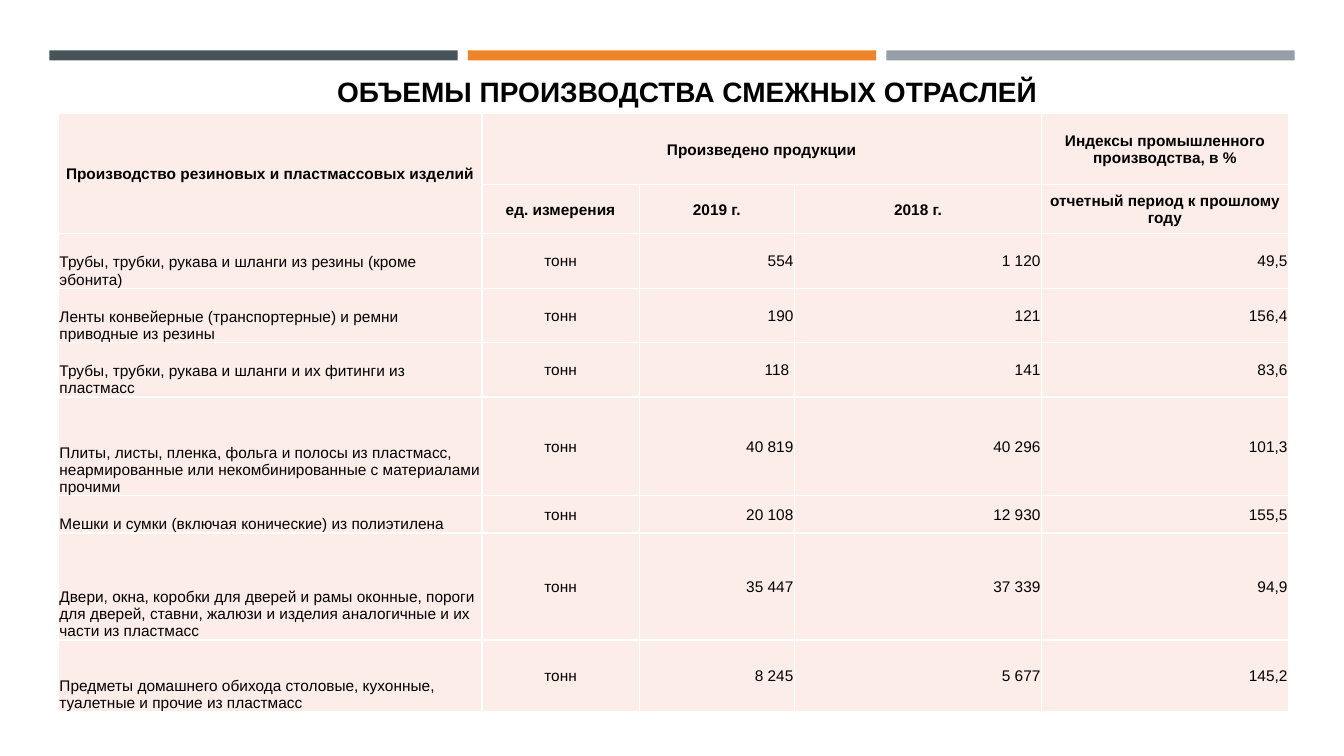
from dataclasses import dataclass

from lxml import etree
from pptx import Presentation
from pptx import util as u
from pptx.dml.color import RGBColor
from pptx.enum import shapes, text
from pptx.oxml.ns import qn


@dataclass(frozen=True)
class Theme:
    font: str = "Arial"
    ink: str = "000000"
    cell: str = "FCEDE8"
    border: str = "FFFFFF"
    bars: tuple = ("465359", "ED8428", "969FA7")
    title_size: int = 20
    table_size: int = 11


THEME = Theme()
LEFT, CENTER, RIGHT = text.PP_ALIGN.LEFT, text.PP_ALIGN.CENTER, text.PP_ALIGN.RIGHT
MIDDLE, BOTTOM = text.MSO_ANCHOR.MIDDLE, text.MSO_ANCHOR.BOTTOM

# Column and row sizes in inches
COLUMNS = [4.2, 1.56, 1.54, 2.45, 2.45]
ROWS = [0.7, 0.49, 0.54, 0.54, 0.54, 0.98, 0.37, 1.06, 0.71]

TITLE = "ОБЪЕМЫ ПРОИЗВОДСТВА СМЕЖНЫХ ОТРАСЛЕЙ"
HEADER = [
    ["Производство резиновых и пластмассовых изделий", "Произведено продукции", "", "",
     "Индексы промышленного производства, в %"],
    ["", "ед. измерения", "2019 г.", "2018 г.", "отчетный период к прошлому году"],
]
UNIT = "тонн"
PRODUCTS = [
    ("Трубы, трубки, рукава и шланги из резины (кроме эбонита)", "554", "1 120", "49,5"),
    ("Ленты конвейерные (транспортерные) и ремни приводные из резины", "190", "121", "156,4"),
    ("Трубы, трубки, рукава и шланги и их фитинги из пластмасс", "118 ", "141", "83,6"),
    ("Плиты, листы, пленка, фольга и полосы из пластмасс, неармированные или "
     "некомбинированные с материалами прочими", "40 819", "40 296", "101,3"),
    ("Мешки и сумки (включая конические) из полиэтилена", "20 108", "12 930", "155,5"),
    ("Двери, окна, коробки для дверей и рамы оконные, пороги для дверей, ставни, "
     "жалюзи и изделия аналогичные и их части из пластмасс", "35 447", "37 339", "94,9"),
    ("Предметы домашнего обихода столовые, кухонные, туалетные и прочие из пластмасс",
     "8 245", "5 677", "145,2"),
]


def set_attributes(obj, values):
    for name, value in values.items():
        setattr(obj, name, value)


def write(p, words, size, bold, align):
    p.alignment = align
    r = p.add_run()
    r.text = words
    set_attributes(r.font, {"name": THEME.font, "size": u.Pt(size), "bold": bold})
    r.font.color.rgb = RGBColor.from_string(THEME.ink)


def add_bars(slide, left, top, width, height, gap=0.1):
    """Equal coloured bars across the box."""
    bar = (width - gap * (len(THEME.bars) - 1)) / len(THEME.bars)
    for i, color in enumerate(THEME.bars):
        sp = slide.shapes.add_shape(
            shapes.MSO_SHAPE.RECTANGLE, u.Inches(left + i * (bar + gap)),
            u.Inches(top), u.Inches(bar), u.Inches(height))
        sp.shadow.inherit = False
        sp.fill.solid()
        sp.fill.fore_color.rgb = RGBColor.from_string(color)
        sp.line.fill.background()


def add_title(slide, *box):
    tf = slide.shapes.add_textbox(*map(u.Inches, box)).text_frame
    set_attributes(tf, {"word_wrap": True, "vertical_anchor": BOTTOM})
    p = tf.paragraphs[0]
    p.line_spacing = 0.9
    write(p, TITLE, THEME.title_size, True, CENTER)


def format_cell(cell, anchor):
    inset = u.Inches(0.01)
    set_attributes(cell, {"margin_left": inset, "margin_right": inset, "margin_top": inset,
                          "margin_bottom": 0, "vertical_anchor": anchor})
    # Borders come before the fill in the cell properties
    tc_pr = cell._tc.get_or_add_tcPr()
    for side in ("a:lnL", "a:lnR", "a:lnT", "a:lnB"):
        ln = etree.SubElement(tc_pr, qn(side), w=str(u.Pt(1)))
        fill = etree.SubElement(ln, qn("a:solidFill"))
        etree.SubElement(fill, qn("a:srgbClr"), val=THEME.border)
    cell.fill.solid()
    cell.fill.fore_color.rgb = RGBColor.from_string(THEME.cell)


def add_production_table(slide, left, top):
    rows = HEADER + [[name, UNIT, *values] for name, *values in PRODUCTS]
    table = slide.shapes.add_table(
        len(ROWS), len(COLUMNS), u.Inches(left), u.Inches(top),
        u.Inches(sum(COLUMNS)), u.Inches(sum(ROWS))).table
    set_attributes(table, {"first_row": False, "horz_banding": False})
    for column, width in zip(table.columns, COLUMNS):
        column.width = u.Inches(width)
    for row, height in zip(table.rows, ROWS):
        row.height = u.Inches(height)

    body_align = [LEFT, CENTER, RIGHT, RIGHT, RIGHT]
    for i, row in enumerate(rows):
        is_header = i < len(HEADER)
        for j, words in enumerate(row):
            cell = table.cell(i, j)
            format_cell(cell, BOTTOM if j == 0 and not is_header else MIDDLE)
            if words:
                write(cell.text_frame.paragraphs[0], words, THEME.table_size,
                      is_header, CENTER if is_header else body_align[j])

    # Header spans
    table.cell(0, 0).merge(table.cell(1, 0))
    table.cell(0, 1).merge(table.cell(0, 3))


def main():
    prs = Presentation()
    set_attributes(prs, {"slide_width": u.Inches(13.33), "slide_height": u.Inches(7.5)})
    slide = prs.slides.add_slide(prs.slide_layouts[6])
    add_bars(slide, 0.49, 0.5, 12.35, 0.1)
    add_title(slide, 0.85, 0.66, 11.93, 0.47)
    add_production_table(slide, 0.58, 1.13)
    prs.save("out.pptx")


if __name__ == "__main__":
    main()
